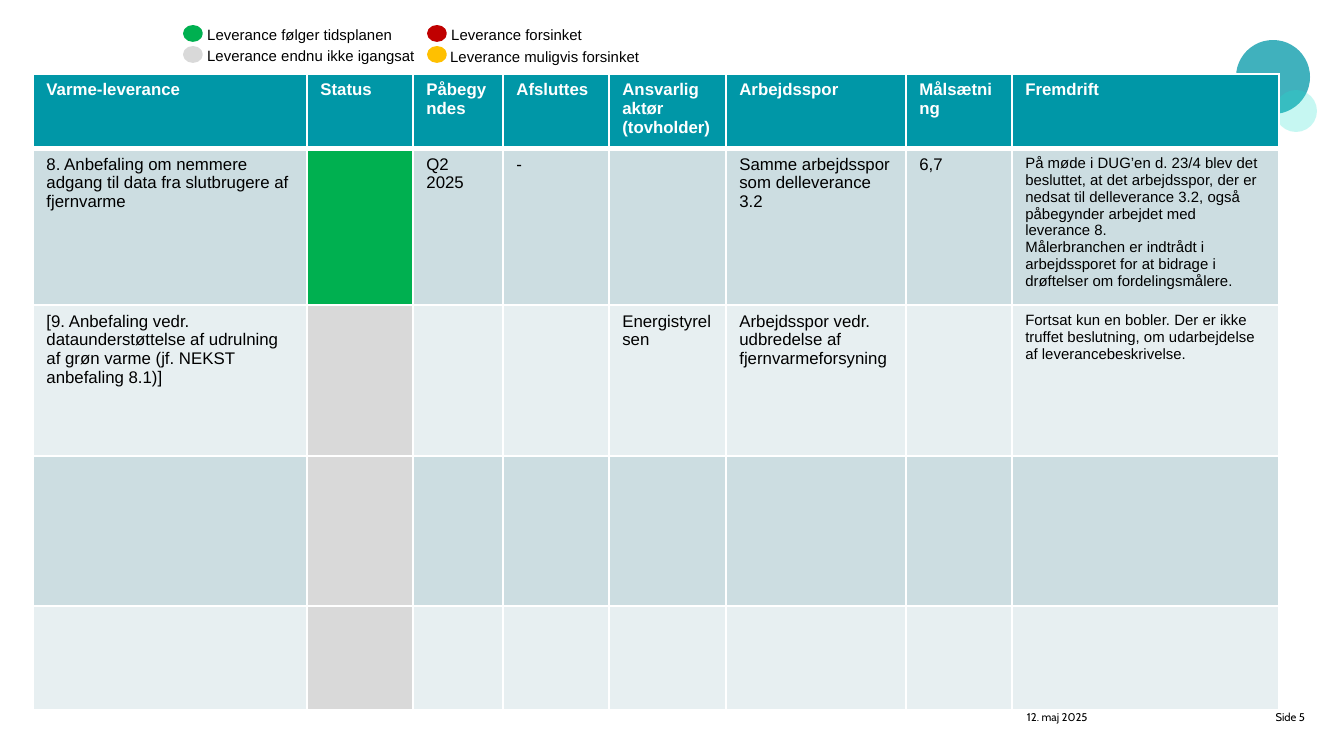
from dataclasses import dataclass

from lxml import etree
from pptx import Presentation
from pptx.dml.color import RGBColor
from pptx.enum.shapes import MSO_SHAPE
from pptx.enum.text import MSO_AUTO_SIZE, PP_ALIGN
from pptx.oxml.ns import qn
from pptx.util import Emu, Pt

OVAL = MSO_SHAPE.OVAL
LEFT, RIGHT = PP_ALIGN.LEFT, PP_ALIGN.RIGHT
FIT_SHAPE = MSO_AUTO_SIZE.SHAPE_TO_FIT_TEXT
SCALE = 914400 / 134.4


@dataclass(frozen=True)
class Theme:
    teal: str = "0097A7"
    mint: str = "1DE2CD"
    green: str = "00B050"
    red: str = "C00000"
    amber: str = "FFC000"
    grey: str = "D9D9D9"
    band_dark: str = "CCDDE1"
    band_light: str = "E7EFF1"
    white: str = "FFFFFF"
    black: str = "000000"
    body_font: str = "Arial"
    footer_font: str = "Cabin"
    cell_size: int = 9
    small_size: int = 8
    footer_size: int = 6


def px(*values):
    return [Emu(round(v * SCALE)) for v in values]


def style(p, size, color, name, bold=False):
    p.font.size = Pt(size)
    p.font.name = name
    p.font.bold = bold
    p.font.color.rgb = RGBColor.from_string(color)


theme = Theme()
prs = Presentation()
prs.slide_width, prs.slide_height = px(1344, 756)
s = prs.slides.add_slide(prs.slide_layouts[6])

for x, y, size, color, alpha in [(1236, 40, 74, theme.teal, 75), (1275, 90, 42, theme.mint, 25)]:
    sp = s.shapes.add_shape(OVAL, *px(x, y, size, size))
    sp.shadow.inherit = False
    sp.fill.solid()
    sp.fill.fore_color.rgb = RGBColor.from_string(color)
    sp.line.fill.background()
    clr = sp.fill._xPr.find(".//" + qn("a:srgbClr"))
    etree.SubElement(clr, qn("a:alpha"), val=str(alpha * 1000))

for x, width, text, align in [(1015, 181, "12. maj 2025", LEFT), (1199, 118, "Side 5", RIGHT)]:
    tf = s.shapes.add_textbox(*px(x, 704, width, 40)).text_frame
    tf.word_wrap = True
    tf.margin_left, tf.margin_right, tf.margin_top, tf.margin_bottom = px(12, 12, 6, 6)
    p = tf.paragraphs[0]
    p.text = text
    p.alignment = align
    style(p, theme.footer_size, theme.black, theme.footer_font)

legend = [
    (185, 194, 19, 215, theme.green, "Leverance følger tidsplanen"),
    (185, 194, 40, 238, theme.grey, "Leverance endnu ikke igangsat"),
    (429, 438, 19, 164, theme.red, "Leverance forsinket"),
    (429, 437, 41, 218, theme.amber, "Leverance muligvis forsinket"),
]
for i, (dot_x, text_x, text_y, width, color, text) in enumerate(legend):
    sp = s.shapes.add_shape(OVAL, *px(dot_x, 27 + i % 2 * 21, 16, 13))
    sp.shadow.inherit = False
    sp.fill.solid()
    sp.fill.fore_color.rgb = sp.line.color.rgb = RGBColor.from_string(color)
    sp.line.width = Pt(2)
    tf = s.shapes.add_textbox(*px(text_x, text_y, width, 32)).text_frame
    tf.word_wrap = False
    tf.auto_size = FIT_SHAPE
    p = tf.paragraphs[0]
    p.text = text
    style(p, theme.small_size, theme.black, theme.body_font)

rows = [
    ["Varme-leverance", "Status", "Påbegyndes", "Afsluttes", "Ansvarlig aktør (tovholder)",
     "Arbejdsspor", "Målsætning", "Fremdrift"],
    ["8. Anbefaling om nemmere adgang til data fra slutbrugere af fjernvarme", "", "Q2 2025", "-", "",
     "Samme arbejdsspor som delleverance 3.2", "6,7",
     "På møde i DUG’en d. 23/4 blev det besluttet, at det arbejdsspor, der er nedsat til "
     "delleverance 3.2, også påbegynder arbejdet med leverance 8.\n"
     "Målerbranchen er indtrådt i arbejdssporet for at bidrage i drøftelser om fordelingsmålere."],
    ["[9. Anbefaling vedr. dataunderstøttelse af udrulning af grøn varme (jf. NEKST anbefaling 8.1)]",
     "", "", "", "Energistyrelsen", "Arbejdsspor vedr. udbredelse af fjernvarmeforsyning", "",
     "Fortsat kun en bobler. Der er ikke truffet beslutning, om udarbejdelse af leverancebeskrivelse."],
    [""] * 8,
    [""] * 8,
]
col_widths = [274, 106, 90, 106, 117, 180, 106, 267]
row_heights = [73, 157, 151, 150, 104]
row_fills = [theme.teal, theme.band_dark, theme.band_light, theme.band_dark, theme.band_light]
status_fills = [theme.teal, theme.green, theme.grey, theme.grey, theme.grey]

table = s.shapes.add_table(len(rows), len(col_widths),
                           *px(33, 74, sum(col_widths), sum(row_heights))).table
for col, width in zip(table.columns, px(*col_widths)):
    col.width = width
for row, height in zip(table.rows, px(*row_heights)):
    row.height = height

for r, texts in enumerate(rows):
    for c, text in enumerate(texts):
        cell = table.cell(r, c)
        tc_pr = cell._tc.get_or_add_tcPr()
        for side in "LRTB":
            thick = (r, side) in [(0, "B"), (1, "T")]
            ln = etree.SubElement(tc_pr, qn("a:ln" + side), w=str(Pt(3 if thick else 1)))
            fill = etree.SubElement(ln, qn("a:solidFill"))
            etree.SubElement(fill, qn("a:srgbClr"), val=theme.white)
        cell.fill.solid()
        cell.fill.fore_color.rgb = RGBColor.from_string(status_fills[r] if c == 1 else row_fills[r])
        cell.text = text
        size = theme.small_size if r and c == 7 else theme.cell_size
        color = theme.black if r else theme.white
        for p in cell.text_frame.paragraphs:
            style(p, size, color, theme.body_font, bold=r == 0)

prs.save("out.pptx")
